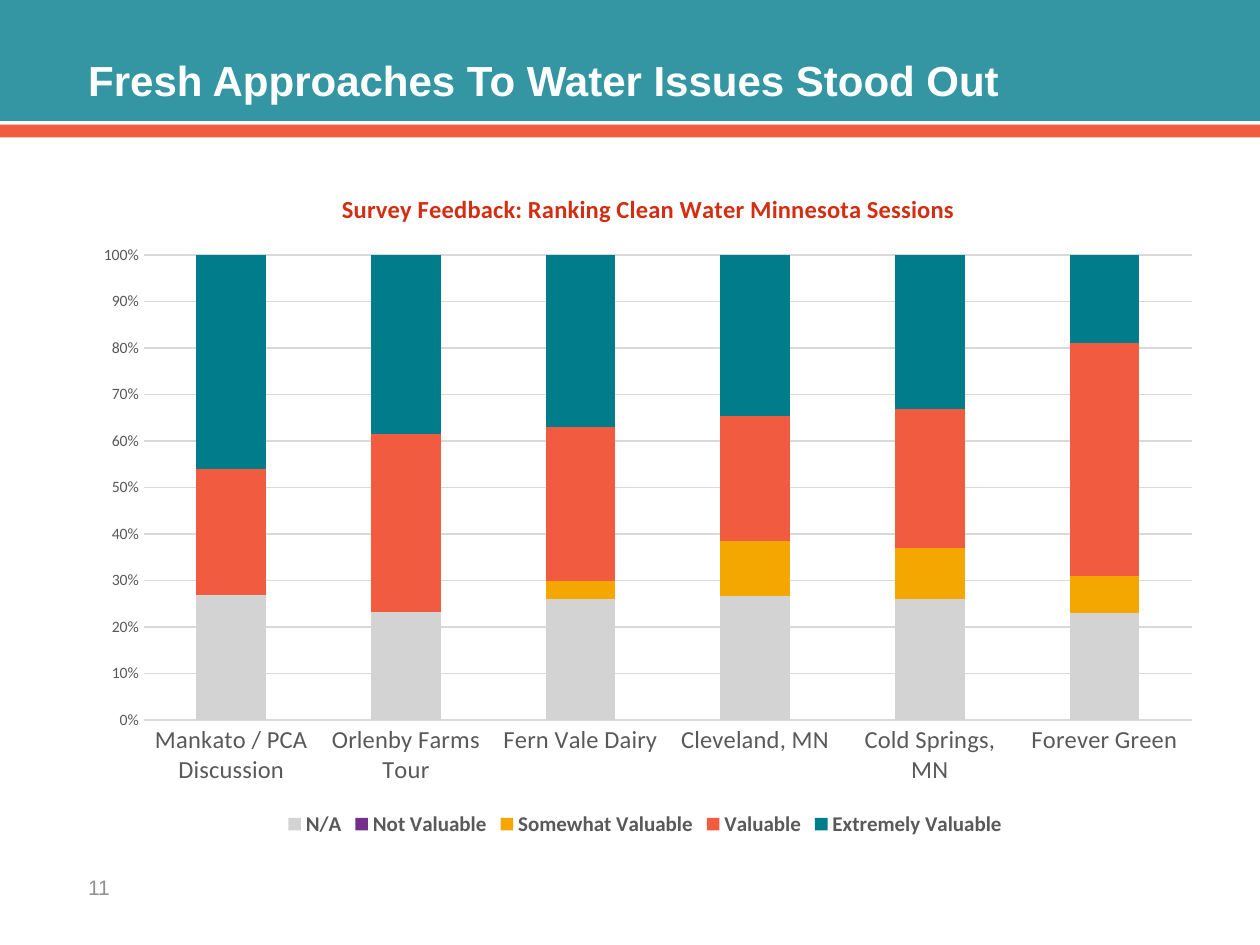
import pptx
import pptx.util
import pptx.chart.data
import pptx.dml.color
import pptx.enum.chart
import pptx.enum.shapes
import pptx.enum.text
import pptx.oxml
import pptx.oxml.ns

Inches, Pt = pptx.util.Inches, pptx.util.Pt
RGB = pptx.dml.color.RGBColor
TEAL = RGB(0x00, 0x7C, 0x8B)
CORAL = RGB(0xF1, 0x5B, 0x40)
GOLD = RGB(0xF4, 0xA7, 0x00)
PLUM = RGB(0x73, 0x2F, 0x8A)
SILVER = RGB(0xD3, 0xD3, 0xD3)
RED = RGB(0xD3, 0x2E, 0x11)
WHITE = RGB(0xFF, 0xFF, 0xFF)
DARK = RGB(0x59, 0x59, 0x59)
GRAY = RGB(0x91, 0x91, 0x91)
RULE = RGB(0xD9, 0xD9, 0xD9)


def style(font, size, color, bold=False, name="Calibri"):
    font.name, font.size, font.bold = name, Pt(size), bold
    font.color.rgb = color


def place(parent, spots, inner=False):
    """Set a manual chart layout, in fractions of the chart."""
    for old in parent.findall(pptx.oxml.ns.qn("c:layout")):
        parent.remove(old)
    body = '<c:layoutTarget val="inner"/>' if inner else ""
    body += "".join(f'<c:{key}Mode val="edge"/>' for key in "xy")
    body += "".join(f'<c:{key} val="{val}"/>' for key, val in spots.items())
    layout = pptx.oxml.parse_xml(
        f'<c:layout {pptx.oxml.ns.nsdecls("c")}>'
        f"<c:manualLayout>{body}</c:manualLayout></c:layout>")
    text = parent.find(pptx.oxml.ns.qn("c:tx"))
    parent.insert(0 if text is None else 1, layout)


deck = pptx.Presentation()
deck.slide_width, deck.slide_height = Inches(10), Inches(7.5)
slide = deck.slides.add_slide(deck.slide_layouts[5])
shapes = slide.shapes

# Header bands
for top, height, color in [(0, 0.96, TEAL), (0.99, 0.1, CORAL)]:
    band = shapes.add_shape(pptx.enum.shapes.MSO_SHAPE.RECTANGLE,
                            0, Inches(top), deck.slide_width, Inches(height))
    band.shadow.inherit = False
    band.fill.solid()
    band.fill.fore_color.rgb = color
    band.line.fill.background()
    if color == TEAL:
        tint = band.element.spPr.find(".//" + pptx.oxml.ns.qn("a:srgbClr"))
        tint.append(pptx.oxml.parse_xml(
            f'<a:alpha {pptx.oxml.ns.nsdecls("a")} val="80000"/>'))

# Title, brought in front of the bands, and page number
title = shapes.title
shapes.element.append(title.element)
title.left, title.top = Inches(0.7), Inches(0.43)
title.width, title.height = Inches(8.8), Inches(0.48)
page = shapes.add_textbox(Inches(0.7), Inches(6.84), Inches(0.5), Inches(0.4))
ANCHOR = pptx.enum.text.MSO_ANCHOR
for box, text, size, color, bold, anchor in [
        (title, "Fresh Approaches To Water Issues Stood Out", 24, WHITE, True,
         ANCHOR.TOP),
        (page, "11", 12, GRAY, False, ANCHOR.MIDDLE)]:
    frame = box.text_frame
    frame.text = text
    frame.word_wrap = True
    frame.auto_size = pptx.enum.text.MSO_AUTO_SIZE.NONE
    frame.vertical_anchor = anchor
    frame.margin_left = frame.margin_right = 0
    frame.margin_top = frame.margin_bottom = 0
    frame.paragraphs[0].alignment = pptx.enum.text.PP_ALIGN.LEFT
    style(frame.paragraphs[0].runs[0].font, size, color, bold, "Arial")

# Survey data
data = pptx.chart.data.CategoryChartData()
data.categories = ["Mankato / PCA Discussion", "Orlenby Farms Tour",
                   "Fern Vale Dairy", "Cleveland, MN", "Cold Springs, MN",
                   "Forever Green"]
ranks = [("N/A", [27, 23, 26, 27, 26, 23], SILVER),
         ("Not Valuable", [0, 0, 0, 0, 0, 0], PLUM),
         ("Somewhat Valuable", [0, 0, 4, 12, 11, 8], GOLD),
         ("Valuable", [27, 38, 33, 27, 30, 50], CORAL),
         ("Extremely Valuable", [46, 38, 37, 35, 33, 19], TEAL)]
for name, vals, color in ranks:
    data.add_series(name, vals)

# Stacked chart
chart = shapes.add_chart(
    pptx.enum.chart.XL_CHART_TYPE.COLUMN_STACKED_100,
    Inches(0.6), Inches(1.33), Inches(9.04), Inches(5.35), data).chart
style(chart.font, 10, DARK)
plot = chart.plots[0]
plot.gap_width, plot.overlap = 150, 100
plot.vary_by_categories = False
for series, (name, vals, color) in zip(plot.series, ranks):
    series.format.fill.solid()
    series.format.fill.fore_color.rgb = color

# Chart title and legend
head = chart.chart_title
head.text_frame.text = "Survey Feedback: Ranking Clean Water Minnesota Sessions"
style(head.text_frame.paragraphs[0].runs[0].font, 14, RED, True)
head.include_in_layout = False
chart.has_legend = True
chart.legend.position = pptx.enum.chart.XL_LEGEND_POSITION.BOTTOM
chart.legend.include_in_layout = False
style(chart.legend.font, 12, DARK, True)

# Axes
cats, scale = chart.category_axis, chart.value_axis
for axis, size in [(cats, 14), (scale, 9)]:
    axis.major_tick_mark = pptx.enum.chart.XL_TICK_MARK.NONE
    axis.minor_tick_mark = pptx.enum.chart.XL_TICK_MARK.NONE
    style(axis.tick_labels.font, size, DARK)
scale.format.line.fill.background()
scale.minimum_scale, scale.maximum_scale, scale.major_unit = 0, 1, 0.1
scale.tick_labels.number_format = "0%"
scale.tick_labels.number_format_is_linked = False
for part in (cats, scale.major_gridlines):
    part.format.line.color.rgb = RULE
    part.format.line.width = Pt(0.75)

# Chart layout
area = chart.element.find(".//" + pptx.oxml.ns.qn("c:plotArea"))
place(area, {"x": 0.06, "y": 0.13, "w": 0.92, "h": 0.69}, inner=True)
place(head.element, {"x": 0.23, "y": 0.03})

deck.save("out.pptx")
